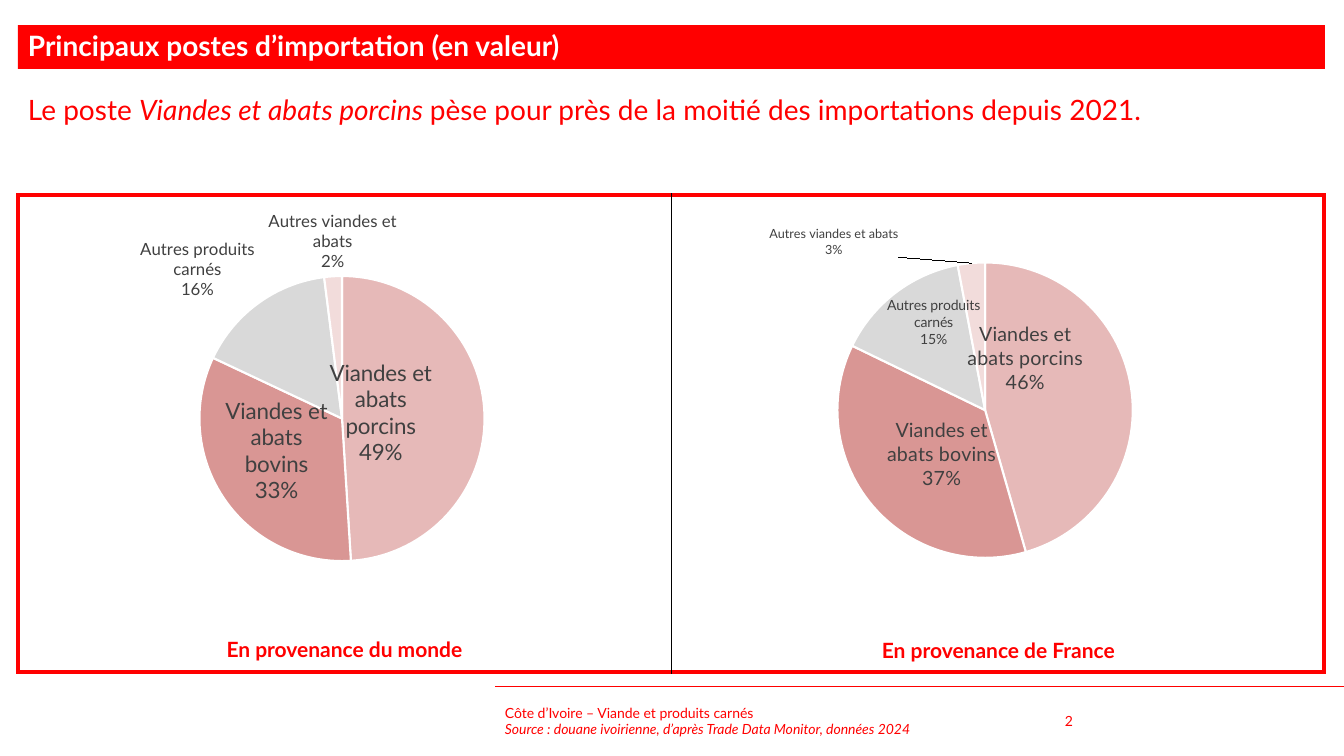
from lxml.etree import SubElement
from pptx import Presentation
from pptx.chart.data import CategoryChartData
from pptx.dml.color import RGBColor
from pptx.enum.chart import XL_CHART_TYPE, XL_LABEL_POSITION
from pptx.enum.shapes import MSO_CONNECTOR, MSO_SHAPE
from pptx.enum.text import MSO_ANCHOR, PP_ALIGN
from pptx.oxml import parse_xml
from pptx.oxml.ns import nsdecls, qn
from pptx.util import Emu, Pt

SCALE = 914400 / 100.8
FACE = "Lato"
HUES = {"red": "FF0000", "white": "FFFFFF", "black": "000000", "ink": "404040",
        "pork": "E6B9B8", "beef": "D99694", "other": "D9D9D9", "rest": "F2DCDB"}
NAMES = ["Viandes et abats porcins", "Viandes et abats bovins",
         "Autres produits carnés", "Autres viandes et abats"]
MID, OUT = XL_LABEL_POSITION.CENTER, XL_LABEL_POSITION.OUTSIDE_END


def px(num):
    """Turn pixels into EMU."""
    return Emu(round(num * SCALE))


def area(*box):
    """Turn a pixel box into EMU lengths."""
    return [px(num) for num in box]


def tint(hue):
    """Give the colour of that name."""
    return RGBColor.from_string(HUES[hue])


def put(item, vals):
    """Set each value of a dict on an object."""
    for key, val in vals.items():
        setattr(item, key, val)


def style(font, size, hue, **more):
    """Format a font."""
    put(font, {"name": FACE, "size": Pt(size), **more})
    font.color.rgb = tint(hue)


def write(shape, lines, size, hue, frame=None, para=None, **more):
    """Fill a shape with lines made of (text, italic) runs."""
    text = shape.text_frame
    put(text, {"word_wrap": True, **(frame or {})})
    for num, line in enumerate(lines):
        part = text.add_paragraph() if num else text.paragraphs[0]
        put(part, para or {})
        for words, slant in line:
            run = part.add_run()
            run.text = words
            style(run.font, size, hue, italic=slant, **more)


def add_text(slide, box, *args, **more):
    """Add a text box."""
    write(slide.shapes.add_textbox(*area(*box)), *args, **more)


def add_bar(slide, box, words):
    """Add the filled title bar."""
    bar = slide.shapes.add_shape(MSO_SHAPE.RECTANGLE, *area(*box))
    bar.shadow.inherit = False
    bar.fill.solid()
    bar.fill.fore_color.rgb = tint("red")
    bar.line.fill.background()
    write(bar, [[(words, False)]], 20, "white", {"vertical_anchor": MSO_ANCHOR.MIDDLE},
          {"alignment": PP_ALIGN.LEFT, "line_spacing": 0.9}, bold=True)


def add_rule(slide, *ends):
    """Add the thin footer line."""
    rule = slide.shapes.add_connector(MSO_CONNECTOR.STRAIGHT, *area(*ends))
    rule.line.width = Pt(0.5)
    rule.line.color.rgb = tint("red")
    SubElement(rule.element.spPr, qn("a:effectLst"))


def edge(cell, edges):
    """Draw the borders of a cell."""
    props = cell._tc.get_or_add_tcPr()
    for num, (side, (hue, width)) in enumerate(edges.items()):
        props.insert(num, parse_xml(
            f'<a:ln{side} {nsdecls("a")} w="{Pt(width)}"><a:solidFill>'
            f'<a:srgbClr val="{HUES[hue]}"/></a:solidFill></a:ln{side}>'))


def add_frame(slide, box):
    """Add the table that frames both charts."""
    table = slide.shapes.add_table(1, 2, *area(*box)).table
    put(table, {"first_row": False, "horz_banding": False})
    thick, thin = ("red", 3), ("black", 0.75)
    for cell, left, right in zip(table.rows[0].cells, (thick, thin), (thin, thick)):
        cell.fill.background()
        edge(cell, {"L": left, "R": right, "T": thick, "B": thick})


def place(**vals):
    """Build a manual chart layout."""
    tags = "".join(f'<c:{key} val="{val}"/>' for key, val in vals.items())
    return parse_xml(f'<c:layout {nsdecls("c")}><c:manualLayout>{tags}'
                     '</c:manualLayout></c:layout>')


def add_pie(slide, box, disc, size, vals, labels):
    """Add a pie; labels hold font size, position and pixel shift."""
    data = CategoryChartData(number_format="0%")
    data.categories = NAMES
    data.add_series("Series 1", vals)
    chart = slide.shapes.add_chart(XL_CHART_TYPE.PIE, *area(*box), data).chart
    put(chart, {"has_title": False, "has_legend": False})
    style(chart.font, size, "black")
    wide, high = box[2:]
    left, top, span = disc
    root = chart.element
    plot = root.xpath("c:chart/c:plotArea")[0]
    for old in plot.xpath("c:layout"):
        plot.remove(old)
    plot.insert(0, place(layoutTarget="inner", xMode="edge", yMode="edge",
                         x=round(left / wide, 2), y=round(top / high, 2),
                         w=round(span / wide, 2), h=round(span / high, 2)))
    row = chart.plots[0].series[0]
    put(row.data_labels, {"show_value": True, "number_format": "0%",
                          "number_format_is_linked": False})
    style(row.data_labels.font, size, "ink")
    for num, (hue, label) in enumerate(zip(("pork", "beef", "other", "rest"), labels)):
        point = row.points[num]
        point.format.fill.solid()
        point.format.fill.fore_color.rgb = tint(hue)
        point.format.line.width = Pt(1.5)
        point.format.line.color.rgb = tint("white")
        points, spot, right, down = label
        style(point.data_label.font, points, "ink")
        point.data_label.position = spot
        if right or down:
            mark = root.xpath(f".//c:dLbl[c:idx/@val={num}]/c:idx")[0]
            mark.addnext(place(x=round(right / wide, 2), y=round(down / high, 2)))
    for flag in root.xpath(".//c:ser//c:showCatName"):
        flag.set("val", "1")
    for flag in root.xpath(".//c:ser//c:showBubbleSize"):
        flag.addnext(parse_xml(f'<c:separator {nsdecls("c")}>\n</c:separator>'))


def main():
    """Build the slide and save it."""
    deck = Presentation()
    put(deck, {"slide_width": px(1344), "slide_height": px(756)})
    slide = deck.slides.add_slide(deck.slide_layouts[6])
    add_rule(slide, 1344, 686, 495, 686)
    add_frame(slide, (18, 195, 1306, 477))
    for left, top, place_name in ((18, 632, "du monde"), (672, 633, "de France")):
        add_text(slide, (left, top, 653, 35), [[(f"En provenance {place_name}", False)]],
                 15, "red", para={"alignment": PP_ALIGN.CENTER}, bold=True)
    foot = {"vertical_anchor": MSO_ANCHOR.MIDDLE}
    add_text(slide, (495, 701, 547, 40),
             [[("Côte d’Ivoire – Viande et produits carnés", False)],
              [("Source : douane ivoirienne, d’après Trade Data Monitor, données 2024", True)]],
             10, "red", foot)
    add_text(slide, (1055, 701, 100, 40), [[("2", False)]], 10, "red", foot)
    add_bar(slide, (18, 25, 1307, 44), "Principaux postes d’importation (en valeur)")
    add_text(slide, (18, 91, 1306, 82),
             [[("Le poste ", False), ("Viandes et abats porcins ", True),
               ("pèse pour près de la moitié des importations depuis 2021.", False)]],
             20, "red", para={"line_spacing": 0.9})
    add_pie(slide, (18, 195, 648, 422), (182, 79, 286), 12, (0.49, 0.33, 0.16, 0.02),
            ((16, MID, -30, -4), (16, MID, -9, -10), (12, OUT, 0, 0), (12, OUT, 0, 0)))
    add_pie(slide, (666, 195, 658, 422), (168, 67, 297), 8, (0.46, 0.37, 0.15, 0.03),
            ((14, MID, -30, -42), (14, MID, 13, -4), (10, MID, -7, -28), (9, OUT, -74, 0)))


    deck.save("out.pptx")


if __name__ == "__main__":
    main()
